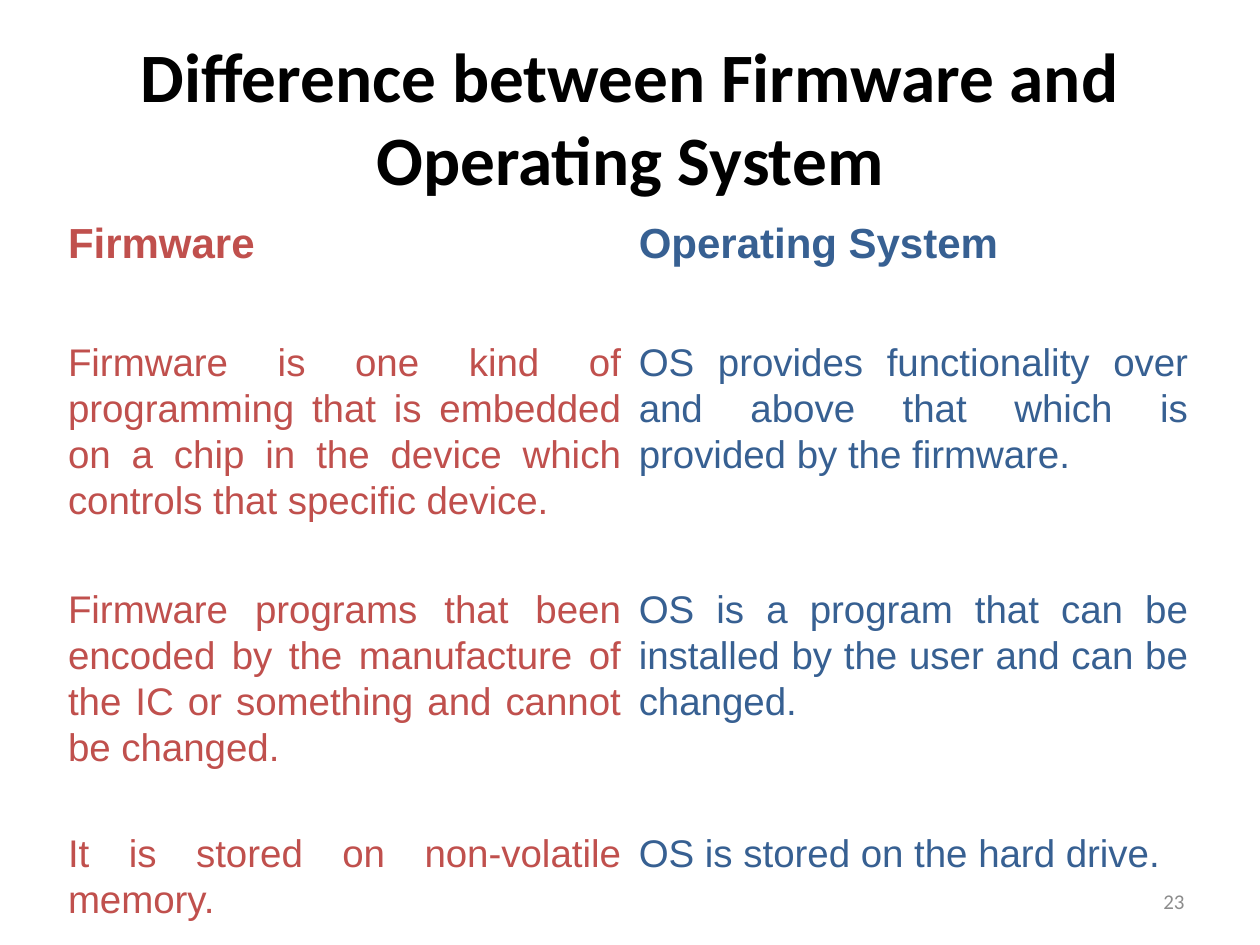
"""Build a slide that compares firmware with an operating system."""
from pptx import Presentation
from pptx import util as u
from pptx.dml.color import RGBColor
from pptx.enum import text as t

HUES = {"ink": "000000", "red": "C0504D", "blue": "376092",
        "gray": "8C8C8C", "white": "FFFFFF"}
ROWS = [
    ("Firmware", "Operating System"),
    ("Firmware is one kind of programming that is embedded on a chip in the "
     "device which controls that specific device.",
     "OS provides functionality over and above that which is provided by the firmware."),
    ("Firmware programs that been encoded by the manufacture of the IC or "
     "something and cannot be changed.",
     "OS is a program that can be installed by the user and can be changed."),
    ("It is stored on non-volatile memory.", "OS is stored on the hard drive."),
]


def write(frame, words, size=22, font="Arial", hue="ink", bold=False,
          align=t.PP_ALIGN.LEFT, lead=None):
    para = frame.paragraphs[0]
    para.alignment = align
    para.line_spacing = lead
    run = para.add_run()
    run.text = words
    run.font.size = u.Pt(size)
    run.font.name = font
    run.font.bold = bold
    run.font.color.rgb = RGBColor.from_string(HUES[hue])


class Deck:
    def __init__(self, wide=10, high=7.5):
        self.file = Presentation()
        self.file.slide_width = self.wide = u.Inches(wide)
        self.file.slide_height = self.high = u.Inches(high)
        self.slide = self.file.slides.add_slide(self.file.slide_layouts[6])

    def area(self, x, y, w, h):
        return (int(x * self.wide), int(y * self.high),
                int(w * self.wide), int(h * self.high))

    def label(self, box, words, **style):
        frame = self.slide.shapes.add_textbox(*self.area(*box)).text_frame
        frame.word_wrap = True
        frame.vertical_anchor = t.MSO_ANCHOR.MIDDLE
        write(frame, words, font="Calibri", **style)

    def table(self, box, rows, cols, highs, tops, hues):
        grid = self.slide.shapes.add_table(
            len(rows), len(cols), *self.area(*box)).table
        for col, share in zip(grid.columns, cols):
            col.width = int(share * self.wide)
        for r, (line, high, top) in enumerate(zip(rows, highs, tops)):
            grid.rows[r].height = u.Inches(high)
            for c, words in enumerate(line):
                cell = grid.cell(r, c)
                cell.fill.solid()
                cell.fill.fore_color.rgb = RGBColor.from_string(HUES["white"])
                cell.margin_left = cell.margin_right = u.Inches(0.07)
                cell.margin_top, cell.margin_bottom = u.Inches(top), 0
                head = r == 0
                write(cell.text_frame, words, size=24 if head else 22,
                      hue=hues[c], bold=head, lead=1.07,
                      align=t.PP_ALIGN.LEFT if head else t.PP_ALIGN.JUSTIFY)


def main():
    deck = Deck()
    deck.label((0.05, 0.04, 0.9, 1 / 6),
               "Difference between Firmware and Operating System",
               size=39.6, bold=True, align=t.PP_ALIGN.CENTER)
    deck.table((0.047, 0.23, 0.903, 0.667), ROWS, cols=(0.453, 0.45),
               highs=(0.96, 1.59, 1.56, 0.89), tops=(0, 0, 0.37, 0.37),
               hues=("red", "blue"))
    deck.label((0.717, 0.927, 0.233, 0.053), "23", size=12, hue="gray",
               align=t.PP_ALIGN.RIGHT)
    deck.file.save("out.pptx")


if __name__ == "__main__":
    main()
